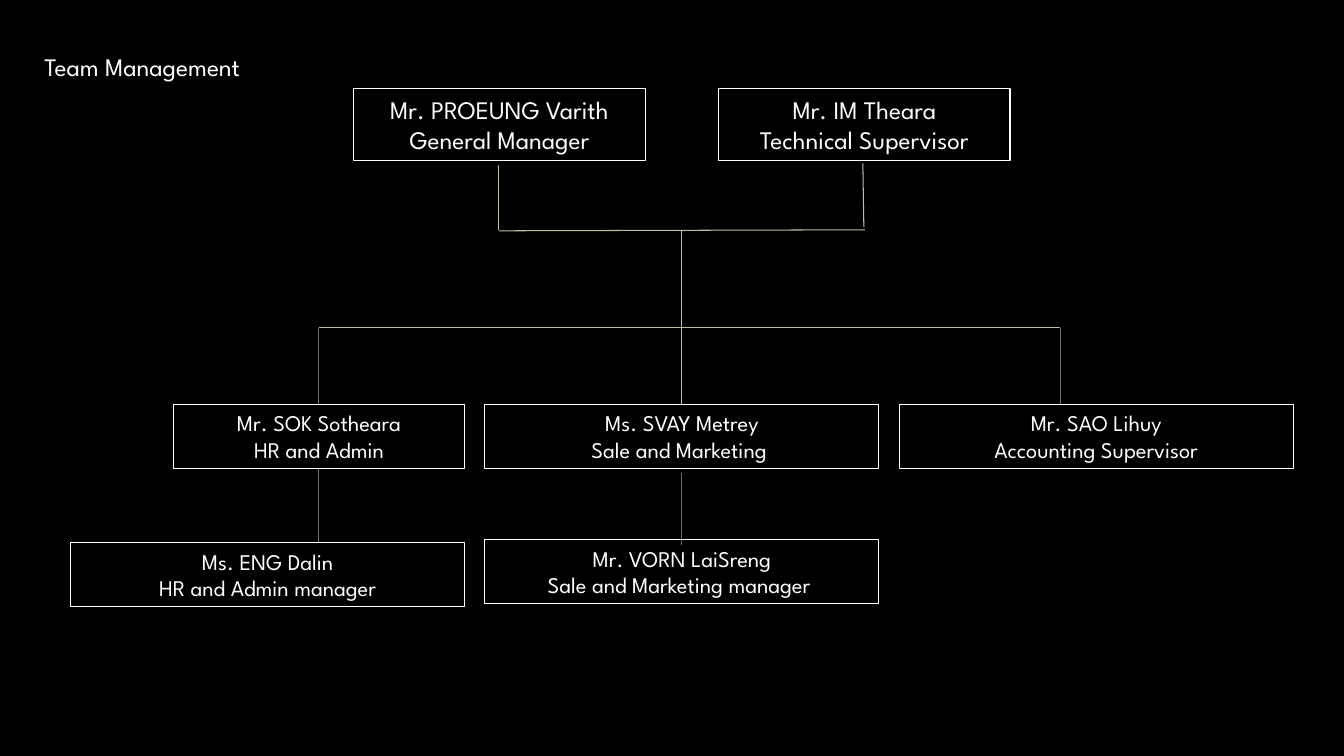
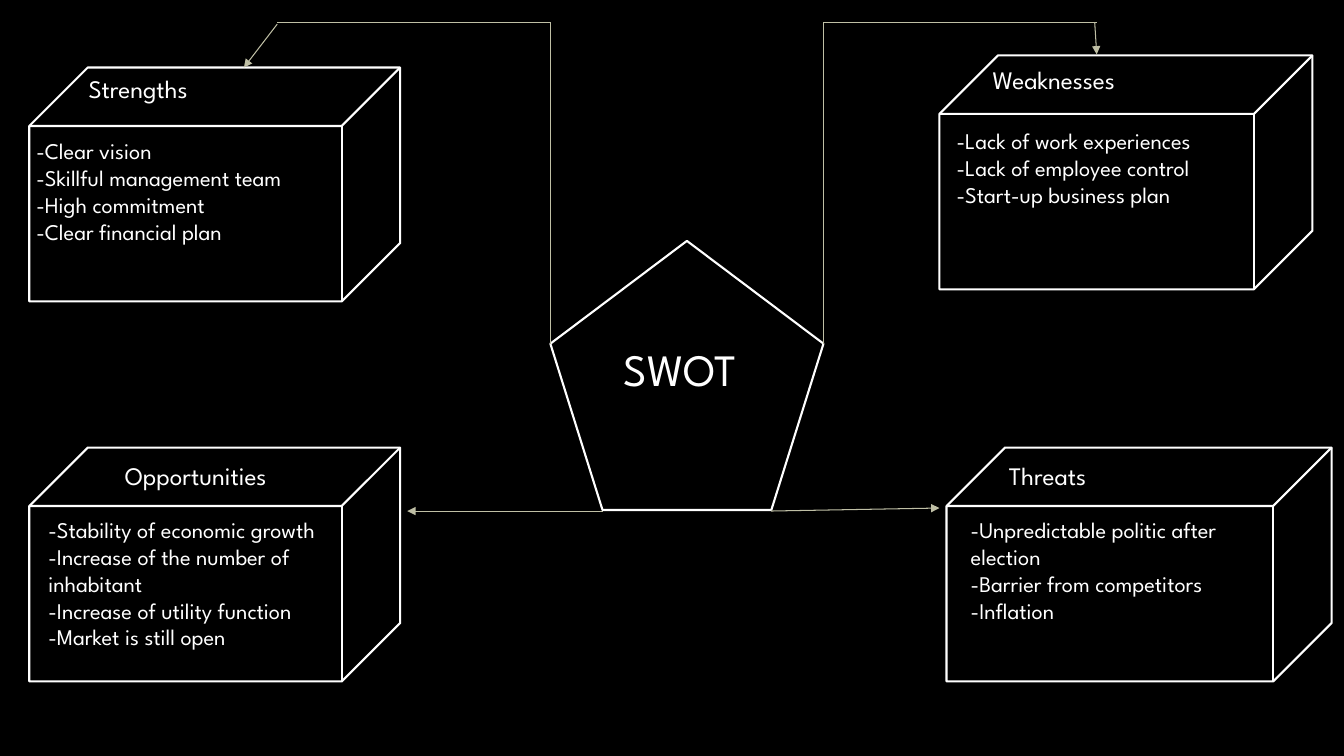
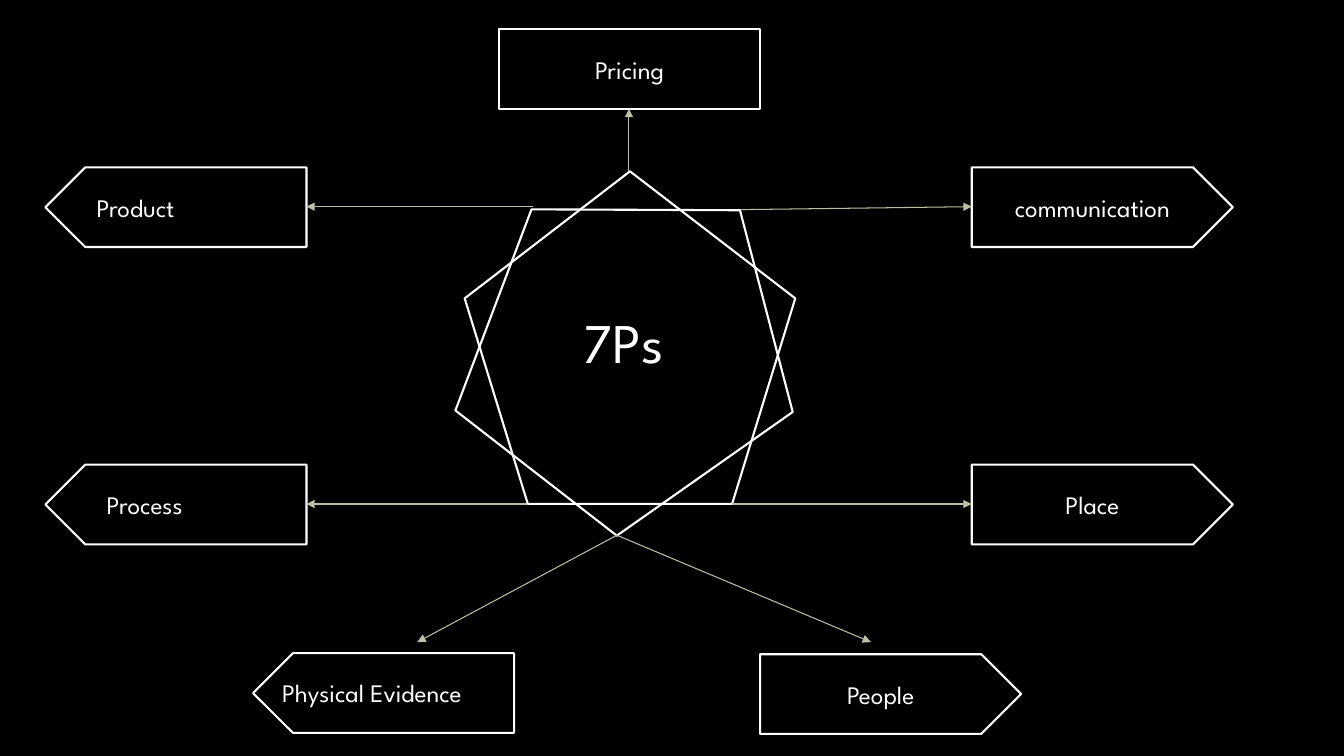
import pptx
import pptx.dml.color
import pptx.enum.shapes
import pptx.enum.text
import pptx.oxml.ns
import pptx.util
from lxml import etree

COLORS = {"background": "000000", "ink": "FFFFFF", "link": "BFBFA5", "drop": "6F6F6F"}
FONT = "League Spartan"
SHAPE = pptx.enum.shapes.MSO_SHAPE
ALIGN = pptx.enum.text.PP_ALIGN
ANCHOR = pptx.enum.text.MSO_ANCHOR

# The slide is a grid of square cells; all lengths below count cells.
CELL = pptx.util.Inches(0.1)
COLUMNS, ROWS = 133.33, 75
TITLE_ONLY, COMPARISON = 5, 4


def cells(*counts):
    return [round(count * CELL) for count in counts]


def rgb(name):
    return pptx.dml.color.RGBColor.from_string(COLORS[name])


def place(shape, box):
    shape.left, shape.top, shape.width, shape.height = cells(*box)


def write(shape, lines, size, align=ALIGN.LEFT, anchor=ANCHOR.TOP):
    """Fill a shape with one unbulleted paragraph per line."""
    frame = shape.text_frame
    frame.word_wrap = True
    frame.auto_size = pptx.enum.text.MSO_AUTO_SIZE.NONE
    frame.vertical_anchor = anchor
    for number, line in enumerate(lines):
        paragraph = frame.paragraphs[0] if number == 0 else frame.add_paragraph()
        paragraph.alignment = align
        paragraph.space_before = pptx.util.Pt(0)
        properties = paragraph._p.get_or_add_pPr()
        properties.set("marL", "0")
        properties.set("indent", "0")
        etree.SubElement(properties, pptx.oxml.ns.qn("a:buNone"))
        run = paragraph.add_run()
        run.text = line
        run.font.name = FONT
        run.font.size = pptx.util.Pt(size)
        run.font.bold = False
        run.font.color.rgb = rgb("ink")


def add_titled_slide(presentation, layout, title, box, size):
    slide = presentation.slides.add_slide(presentation.slide_layouts[layout])
    place(slide.shapes.title, box)
    write(slide.shapes.title, [title], size)
    return slide


def add_label(slide, box, text, size=18):
    write(slide.shapes.add_textbox(*cells(*box)), [text], size)


def add_outline(slide, kind, box, weight=1.5, rotation=0):
    shape = slide.shapes.add_shape(kind, *cells(*box))
    shape.shadow.inherit = False
    shape.fill.background()
    shape.line.color.rgb = rgb("ink")
    shape.line.width = pptx.util.Pt(weight)
    shape.rotation = rotation
    return shape


def add_link(slide, start, end, color="link", arrow=False):
    connector = slide.shapes.add_connector(
        pptx.enum.shapes.MSO_CONNECTOR.STRAIGHT, *cells(*start, *end))
    connector.line.color.rgb = rgb(color)
    connector.line.width = pptx.util.Pt(0.75)
    if arrow:
        etree.SubElement(connector.line._get_or_add_ln(),
                         pptx.oxml.ns.qn("a:tailEnd"), type="triangle")
    etree.SubElement(connector._element.spPr, pptx.oxml.ns.qn("a:effectLst"))


def build_team(presentation):
    slide = add_titled_slide(presentation, TITLE_ONLY, "Team Management",
                             (3.4, 4.6, 36.2, 7.1), 18)
    narrow, wide = 28.9, 39.1
    lead_row, head_row = 8.8, 40.1
    cards = [
        (35.1, lead_row, narrow, "Mr. PROEUNG Varith", "General Manager"),
        (71.3, lead_row, narrow, "Mr. IM Theara", "Technical Supervisor"),
        (17.2, head_row, narrow, "Mr. SOK Sotheara", "HR and Admin"),
        (48.1, head_row, wide, "Ms. SVAY Metrey", "Sale and Marketing "),
        (89.2, head_row, wide, "Mr. SAO Lihuy", "Accounting Supervisor"),
        (7, 53.8, wide, "Ms. ENG Dalin", "HR and Admin manager"),
        (48.1, 53.5, wide, "Mr. VORN LaiSreng", "Sale and Marketing manager "),
    ]
    for left, top, width, name, role in cards:
        height, size = (7.1, 18) if top == lead_row else (6.4, 16)
        card = add_outline(slide, SHAPE.RECTANGLE, (left, top, width, height), 0.75)
        write(card, [name, role], size, ALIGN.CENTER, ANCHOR.MIDDLE)

    manager, supervisor, trunk = 49.5, 85.7, 67.65
    admin, accounting, branch_row = 31.6, 105.2, 32.5
    for start, end in [
        ((manager, 16.4), (manager, 22.8)),
        ((supervisor - 0.1, 16.2), (supervisor, 22.5)),
        ((manager, 22.9), (supervisor + 0.1, 22.8)),
        ((trunk, 22.9), (trunk, head_row)),
        ((admin, branch_row), (accounting, branch_row)),
    ]:
        add_link(slide, start, end)
    for column, top, bottom in [
        (admin, branch_row, head_row),
        (accounting, branch_row, head_row),
        (admin, 46.5, 53.8),
        (trunk, 46.9, 54.1),
    ]:
        add_link(slide, (column, top), (column, bottom), "drop")


def build_swot(presentation):
    slide = add_titled_slide(presentation, COMPARISON, "SWOT",
                             (60.9, 33.4, 20.1, 11.8), 32)
    add_outline(slide, SHAPE.REGULAR_PENTAGON, (54.6, 23.9, 27.1, 26.7))
    # Cube (left, top, width), heading, heading box, list box, list
    quadrants = [
        ((2.9, 6.7, 36.8), "Strengths", (7.8, 6.8, 16.1, 4), (2.6, 13.1, 31.8, 11.8),
         ["-Clear vision", "-Skillful management team", "-High commitment",
          "-Clear financial plan"]),
        ((93.2, 5.5, 37), "Weaknesses", (97.5, 5.9, 17, 4), (93.9, 12.1, 32.3, 9.1),
         ["-Lack of work experiences", "-Lack of employee control",
          "-Start-up business plan"]),
        ((2.9, 44.4, 36.8), "Opportunities", (11.4, 45.2, 19.9, 4), (3.8, 50.7, 31.6, 17.2),
         ["-Stability of economic growth", "-Increase of the number of inhabitant",
          "-Increase of utility function", "-Market is still open"]),
        ((93.9, 44.4, 38.2), "Threats", (99.1, 45.2, 17, 4), (95.3, 50.7, 33, 11.8),
         ["-Unpredictable politic after election", "-Barrier from competitors",
          "-Inflation"]),
    ]
    for index, (cube, heading, heading_box, list_box, points) in enumerate(quadrants, 1):
        add_outline(slide, SHAPE.CUBE, (*cube, 23.2))
        add_label(slide, heading_box, heading)
        body = slide.placeholders[index]
        place(body, list_box)
        write(body, points, 16)

    top_row, shoulder_row = 2.2, 34.1
    for shoulder, turn in [(54.6, 27.5), (81.7, 108.8)]:
        add_link(slide, (shoulder, shoulder_row), (shoulder, top_row))
        add_link(slide, (shoulder, top_row), (turn, top_row))
    for start, end in [
        ((27.5, 2.4), (24.2, 6.7)),
        ((108.6, top_row), (108.8, 5.4)),
        ((59.8, 50.7), (40.4, 50.7)),
        ((76.5, 50.7), (93.2, 50.4)),
    ]:
        add_link(slide, start, end, arrow=True)


def build_marketing_mix(presentation):
    slide = add_titled_slide(presentation, TITLE_ONLY, "7Ps", (56.9, 30, 18.5, 7.7), 40)
    add_outline(slide, SHAPE.REGULAR_PENTAGON, (46.1, 17, 32.8, 33))
    add_outline(slide, SHAPE.REGULAR_PENTAGON, (46.9, 17.4, 32.8, 33), rotation=37.8)

    plate = (25.9, 7.9)
    left, right, upper, lower = 4.5, 96.4, 16.6, 46.1
    for kind, column, row, text in [
        (SHAPE.RECTANGLE, 49.5, 2.9, "Pricing"),
        (SHAPE.PENTAGON, right, upper, "communication"),
        (SHAPE.PENTAGON, right, lower, "Place"),
        (SHAPE.PENTAGON, 75.4, 64.9, "People"),
    ]:
        shape = add_outline(slide, kind, (column, row, *plate))
        write(shape, [text], 18, ALIGN.CENTER, ANCHOR.MIDDLE)
    # Plates turned to point left carry their text in an upright label.
    for column, row, text, label_left, label_width in [
        (left, upper, "Product", 8.6, 18.2),
        (left, lower, "Process", 9.6, 18.1),
        (25.1, 64.8, "Physical Evidence", 27, 25.3),
    ]:
        add_outline(slide, SHAPE.PENTAGON, (column, row, *plate), rotation=180)
        add_label(slide, (label_left, row + 1.95, label_width, 4), text)

    left_end, tip = left + plate[0], (61.2, 53.1)
    for start, end in [
        ((62.4, 17), (62.4, 10.8)),
        ((52.9, 20.5), (left_end, 20.5)),
        ((73.4, 20.8), (right, 20.5)),
        ((52.3, 50), (left_end, 50)),
        ((72.6, 50), (right, 50)),
        (tip, (41.4, 63.7)),
        (tip, (86.4, 63.7)),
    ]:
        add_link(slide, start, end, arrow=True)


def main():
    presentation = pptx.Presentation()
    presentation.slide_width, presentation.slide_height = cells(COLUMNS, ROWS)
    background = presentation.slide_master.background.fill
    background.solid()
    background.fore_color.rgb = rgb("background")
    build_team(presentation)
    build_swot(presentation)
    build_marketing_mix(presentation)
    presentation.save("out.pptx")


if __name__ == "__main__":
    main()
